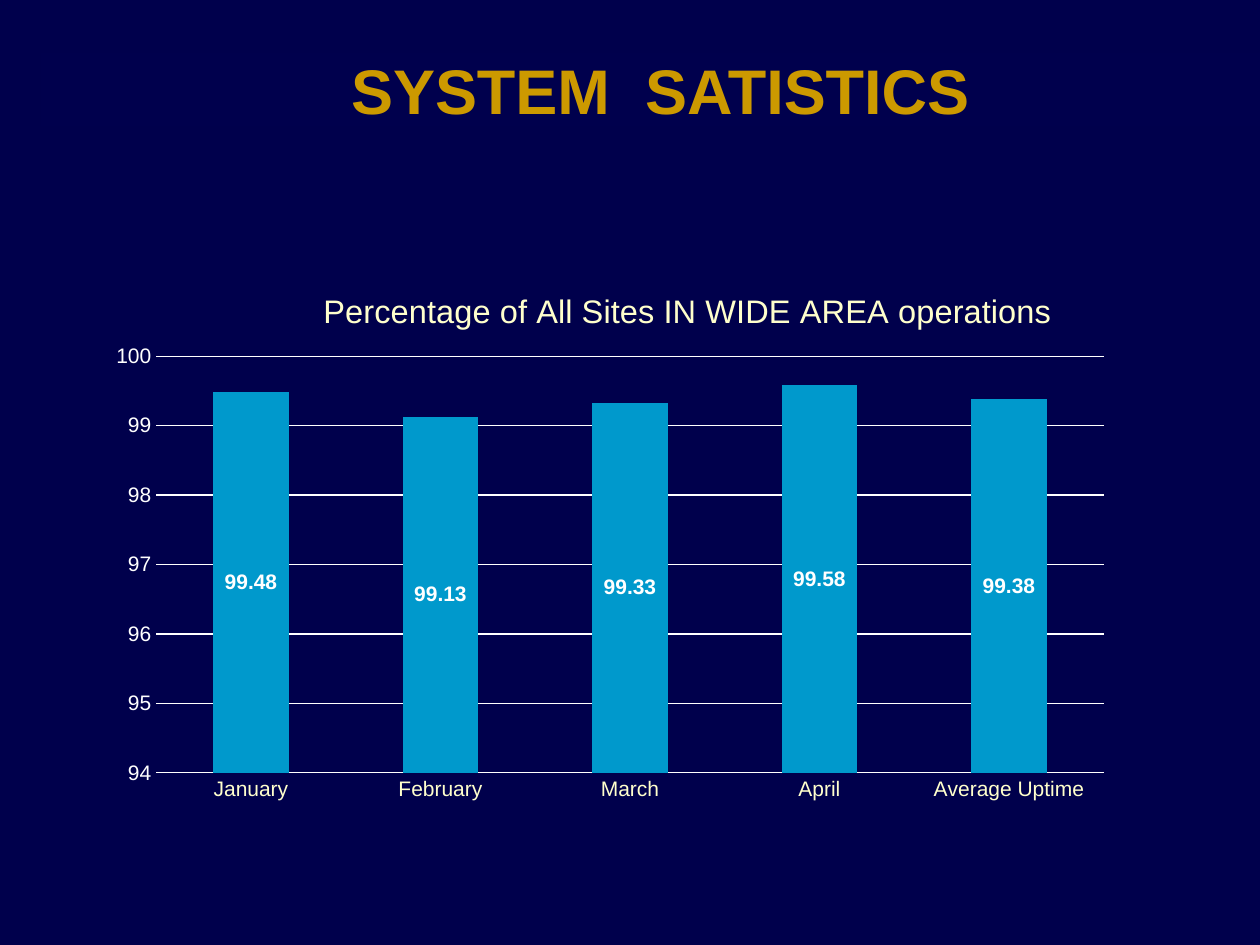
from dataclasses import dataclass

from lxml import etree
from pptx import Presentation
from pptx.chart.data import CategoryChartData
from pptx.dml.color import RGBColor
from pptx.enum.chart import XL_CHART_TYPE, XL_LABEL_POSITION, XL_TICK_MARK
from pptx.enum.text import MSO_ANCHOR, PP_ALIGN
from pptx.oxml import parse_xml
from pptx.oxml.ns import nsdecls
from pptx.util import Inches, Pt

STACKED = XL_CHART_TYPE.COLUMN_STACKED
CENTER_LABEL = XL_LABEL_POSITION.CENTER
NO_TICK = XL_TICK_MARK.NONE
MIDDLE = MSO_ANCHOR.MIDDLE
CENTER = PP_ALIGN.CENTER


@dataclass(frozen=True)
class Theme:
    font: str = "Arial"
    background: str = "00004C"
    band: str = "00004D"
    heading: str = "CC9900"
    cream: str = "FFFFCC"
    white: str = "FFFFFF"
    bar: str = "0099CC"
    heading_size: float = 36
    chart_title_size: float = 18.6
    label_size: float = 12
    base_size: float = 10


THEME = Theme()
WIDTH, HEIGHT = Inches(10), Inches(7.5)
UPTIME = {
    "January": 99.48,
    "February": 99.13,
    "March": 99.33,
    "April": 99.58,
    "Average Uptime": 99.38,
}


def paint(fill, color):
    fill.solid()
    fill.fore_color.rgb = RGBColor.from_string(color)


def style_font(font, size, color, bold=False):
    font.name = THEME.font
    font.size = Pt(size)
    font.bold = bold
    font.color.rgb = RGBColor.from_string(color)


def add_text(p, text, size, color, bold=False, spacing=None):
    """Append a run; spacing is extra character spacing in points."""
    r = p.add_run()
    r.text = text
    style_font(r.font, size, color, bold)
    if spacing:
        r.font._element.set("spc", str(spacing * 100))


def set_layout(parent, x, y, w=None, h=None, inner=False):
    """Place a chart part by shares of the chart's size."""
    for old in parent.findall("{*}layout"):
        parent.remove(old)
    values = [("layoutTarget", "inner")] if inner else []
    values += [("xMode", "edge"), ("yMode", "edge"), ("x", x), ("y", y)]
    if w is not None:
        values += [("w", w), ("h", h)]
    layout = parse_xml(f"<c:layout {nsdecls('c')}><c:manualLayout/></c:layout>")
    ns = etree.QName(layout).namespace
    for tag, value in values:
        etree.SubElement(layout[0], f"{{{ns}}}{tag}").set("val", str(value))
    text = parent.find("{*}tx")
    parent.insert(0 if text is None else 1, layout)


def add_heading(slide):
    sp = slide.shapes.add_shape(1, Inches(0.32), Inches(0.42),
                                Inches(9.7), Inches(0.58))
    sp.shadow.inherit = False
    paint(sp.fill, THEME.band)
    sp.line.fill.background()
    tf = sp.text_frame
    tf.word_wrap = True
    tf.vertical_anchor = MIDDLE
    tf.margin_left = Inches(0.24)
    p = tf.paragraphs[0]
    p.alignment = CENTER
    for text, spacing in (("SYSTEM", None), (" ", 10), ("SATISTICS", None)):
        add_text(p, text, THEME.heading_size, THEME.heading, True, spacing)


def style_axis(axis, color):
    axis.major_tick_mark = axis.minor_tick_mark = NO_TICK
    axis.format.line.fill.background()
    style_font(axis.tick_labels.font, THEME.label_size, color)


def style_value_axis(axis):
    style_axis(axis, THEME.white)
    axis.minimum_scale, axis.maximum_scale, axis.major_unit = 94, 100, 1
    axis.has_major_gridlines = True
    line = axis.major_gridlines.format.line
    paint(line.fill, THEME.white)
    line.width = Pt(0.75)


def style_bars(plot):
    plot.gap_width, plot.overlap = 150, 100
    plot.vary_by_categories = False
    paint(plot.series[0].format.fill, THEME.bar)
    labels = plot.series[0].data_labels
    labels.show_value = True
    labels.position = CENTER_LABEL
    style_font(labels.font, THEME.label_size, THEME.white, bold=True)


def add_uptime_chart(slide):
    data = CategoryChartData()
    data.categories = list(UPTIME)
    data.add_series("Series 1", list(UPTIME.values()))
    chart = slide.shapes.add_chart(STACKED, Inches(0.92), Inches(1.83),
                                   Inches(8), Inches(5.25), data).chart
    style_font(chart.font, THEME.base_size, THEME.white)
    chart.has_legend = False
    chart.has_title = True
    title = chart.chart_title
    add_text(title.text_frame.paragraphs[0],
             "Percentage of All Sites IN WIDE AREA operations",
             THEME.chart_title_size, THEME.cream)
    title.include_in_layout = False
    set_layout(title._element, 0.2, 0.08)
    style_axis(chart.category_axis, THEME.cream)
    style_value_axis(chart.value_axis)
    style_bars(chart.plots[0])
    set_layout(chart._chartSpace.chart.plotArea,
               0.04, 0.19, 0.94, 0.63, inner=True)


def main():
    prs = Presentation()
    prs.slide_width, prs.slide_height = WIDTH, HEIGHT
    slide = prs.slides.add_slide(prs.slide_layouts[6])
    paint(slide.background.fill, THEME.background)
    add_heading(slide)
    add_uptime_chart(slide)
    prs.save("out.pptx")


if __name__ == "__main__":
    main()
